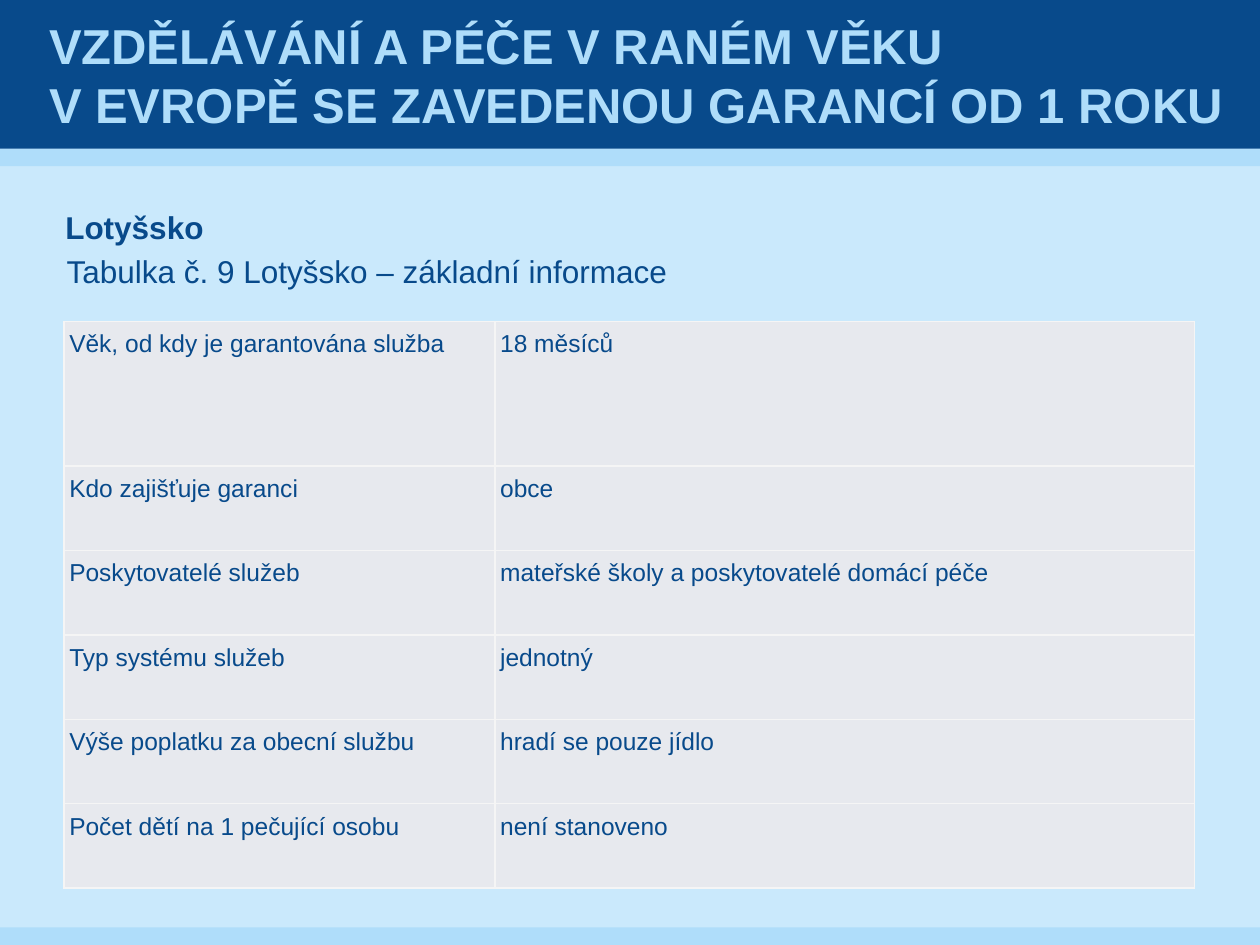
import pptx
import pptx.dml.color
import pptx.enum.shapes
import pptx.enum.text
import pptx.oxml
import pptx.oxml.ns
import pptx.util

W, H = 10, 7.5
NAVY, SKY, PALE, GREY, LINE = "084A8B", "AFDDFA", "CAE9FC", "E7E9EE", "F5F5F5"
HEADER, STRIPE = 1.18, 0.14
COLUMNS = [3.42, 5.55]
ROWS = [1.15] + [0.67] * 5
FACTS = [
    ("Věk, od kdy je garantována služba", "18 měsíců"),
    ("Kdo zajišťuje garanci", "obce"),
    ("Poskytovatelé služeb", "mateřské školy a poskytovatelé domácí péče"),
    ("Typ systému služeb", "jednotný"),
    ("Výše poplatku za obecní službu", "hradí se pouze jídlo"),
    ("Počet dětí na 1 pečující osobu", "není stanoveno"),
]
inch = pptx.util.Inches


def paint(fill, color):
    fill.solid()
    fill.fore_color.rgb = pptx.dml.color.RGBColor.from_string(color)


def write(tf, text, size=18, color=NAVY, bold=False, align=None,
          spacing=None, before=None):
    """Fill the first paragraph; a vertical tab in text breaks the line."""
    p = tf.paragraphs[0]
    p.text = text
    p.alignment = align
    p.line_spacing = spacing
    p.space_before = before
    for r in p.runs:
        r.font.name = "Arial"
        r.font.size = pptx.util.Pt(size)
        r.font.bold = bold
        paint(r.font.fill, color)


def add_band(s, top, height, color):
    sp = s.shapes.add_shape(pptx.enum.shapes.MSO_SHAPE.RECTANGLE,
                            0, inch(top), inch(W), inch(height))
    sp.shadow.inherit = False
    sp.line.fill.background()
    paint(sp.fill, color)


def add_text(s, box, text, **fmt):
    tf = s.shapes.add_textbox(*map(inch, box)).text_frame
    tf.word_wrap = True
    write(tf, text, **fmt)
    return tf


def add_borders(cell):
    tc_pr = cell._tc.get_or_add_tcPr()
    for i, side in enumerate(("lnL", "lnR", "lnT", "lnB")):
        tc_pr.insert(i, pptx.oxml.parse_xml(
            f'<a:{side} {pptx.oxml.ns.nsdecls("a")} w="12700"><a:solidFill>'
            f'<a:srgbClr val="{LINE}"/></a:solidFill></a:{side}>'))


def add_facts(s, left, top):
    table = s.shapes.add_table(
        len(ROWS), len(COLUMNS), inch(left), inch(top),
        inch(sum(COLUMNS)), inch(sum(ROWS))).table
    table.first_row = table.horz_banding = False
    for column, width in zip(table.columns, COLUMNS):
        column.width = inch(width)
    for row, height, texts in zip(table.rows, ROWS, FACTS):
        row.height = inch(height)
        for cell, text in zip(row.cells, texts):
            cell.margin_left = cell.margin_right = inch(0.04)
            cell.margin_top = cell.margin_bottom = inch(0.04)
            paint(cell.fill, GREY)
            add_borders(cell)
            write(cell.text_frame, text, size=14, spacing=1.15,
                  before=pptx.util.Pt(6),
                  align=pptx.enum.text.PP_ALIGN.JUSTIFY)


def main():
    prs = pptx.Presentation()
    prs.slide_width, prs.slide_height = inch(W), inch(H)
    s = prs.slides.add_slide(prs.slide_layouts[6])
    paint(s.background.fill, PALE)

    # Header and footer bands
    add_band(s, HEADER, STRIPE, SKY)
    add_band(s, 0, HEADER, NAVY)
    add_band(s, H - STRIPE, STRIPE, SKY)

    # Table with its headings
    add_facts(s, 0.51, 2.55)
    add_text(s, (0.42, 1.6, 4.82, 0.4), "Lotyšsko", bold=True)
    add_text(s, (0.43, 1.95, 6.58, 0.4),
             "Tabulka č. 9 Lotyšsko – základní informace")

    # Slide title
    tf = add_text(s, (0.35, 0, 9.45, HEADER),
                  "VZDĚLÁVÁNÍ A PÉČE V RANÉM VĚKU\v"
                  "V EVROPĚ SE ZAVEDENOU GARANCÍ OD 1 ROKU",
                  size=28, color=SKY, bold=True)
    tf.vertical_anchor = pptx.enum.text.MSO_ANCHOR.MIDDLE
    tf.margin_left = tf.margin_right = inch(0.04)
    tf.margin_top = tf.margin_bottom = 0

    prs.save("out.pptx")


if __name__ == "__main__":
    main()
